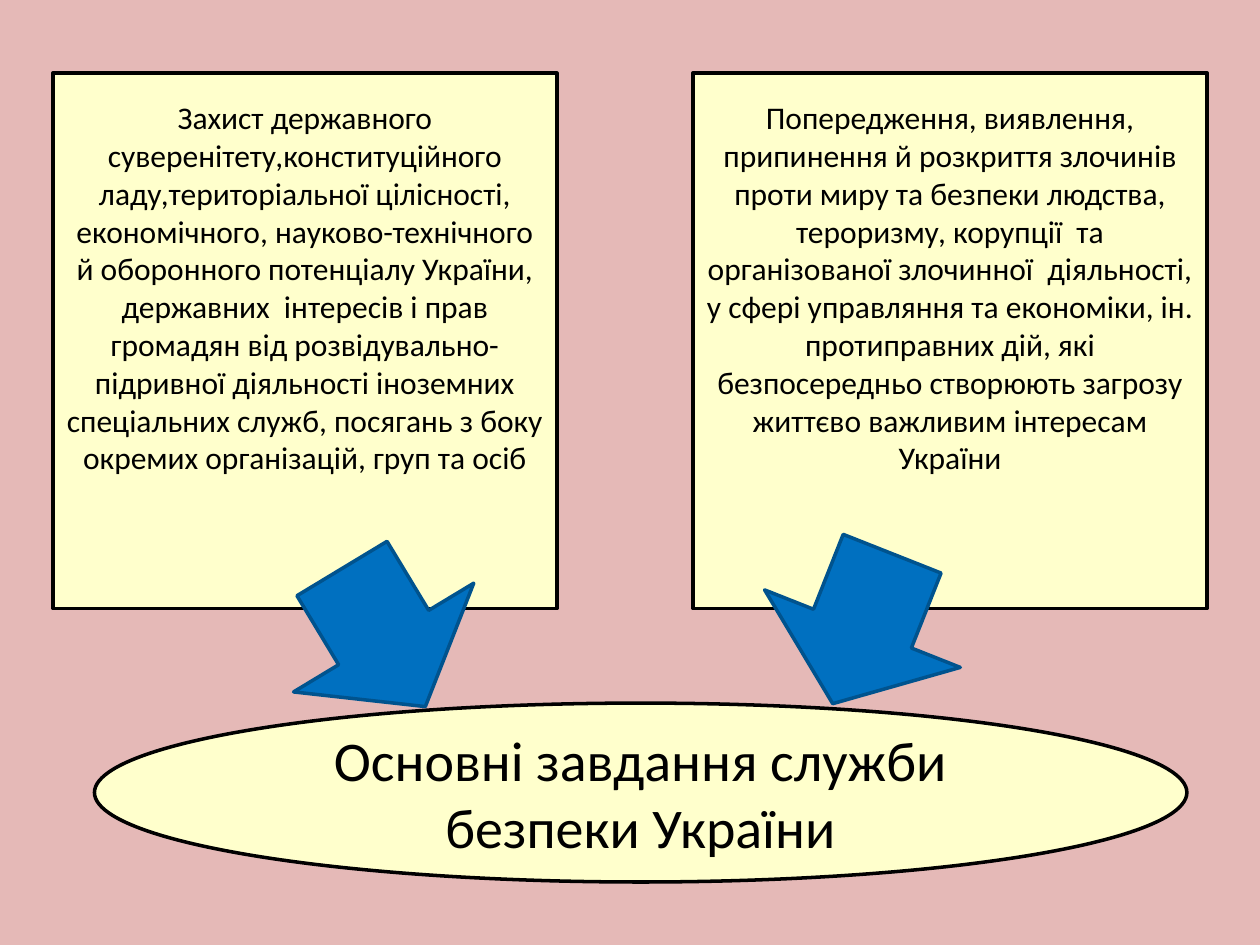
from pptx import Presentation
from pptx.dml.color import RGBColor
from pptx.enum.shapes import MSO_SHAPE as SHAPE
from pptx.enum.text import MSO_ANCHOR as ANCHOR, PP_ALIGN as ALIGN
from pptx.util import Inches, Pt

PINK = RGBColor(0xE5, 0xB9, 0xB7)
CREAM = RGBColor(0xFF, 0xFF, 0xCC)
BLACK = RGBColor(0x00, 0x00, 0x00)
BLUE = RGBColor(0x00, 0x70, 0xC0)
DARK_BLUE = RGBColor(0x00, 0x53, 0x8E)

SOVEREIGNTY = (
    "Захист державного суверенітету,конституційного ладу,територіальної "
    "цілісності, економічного, науково-технічного й оборонного потенціалу "
    "України, державних  інтересів і прав громадян від "
    "розвідувально-підривної діяльності іноземних спеціальних служб, "
    "посягань з боку окремих організацій, груп та осіб"
)
CRIME = (
    "Попередження, виявлення, припинення й розкриття злочинів проти миру та "
    "безпеки людства, тероризму, корупції  та організованої злочинної  "
    "діяльності, у сфері управляння та економіки, ін. протиправних дій, які "
    "безпосередньо створюють загрозу життєво важливим інтересам України"
)


def add_outlined(slide, kind, box, fill, line):
    s = slide.shapes.add_shape(kind, *(Inches(v) for v in box))
    s.shadow.inherit = False
    s.fill.solid()
    s.fill.fore_color.rgb = fill
    s.line.color.rgb = line
    s.line.width = Pt(2)
    return s


def write_text(s, text, size, anchor):
    tf = s.text_frame
    tf.word_wrap = True
    tf.vertical_anchor = anchor
    p = tf.paragraphs[0]
    p.alignment = ALIGN.CENTER
    r = p.add_run()
    r.text = text
    r.font.name = "Calibri"
    r.font.size = Pt(size)
    r.font.color.rgb = BLACK


def add_topic(slide, box, text):
    s = add_outlined(slide, SHAPE.OVAL, box, CREAM, BLACK)
    write_text(s, text, 32, ANCHOR.MIDDLE)


def add_task(slide, box, text):
    s = add_outlined(slide, SHAPE.RECTANGLE, box, CREAM, BLACK)
    s.text_frame.margin_top = s.text_frame.margin_bottom = Inches(0.2)
    write_text(s, text, 18, ANCHOR.TOP)


def add_arrow(slide, box, rotation):
    s = add_outlined(slide, SHAPE.DOWN_ARROW, box, BLUE, DARK_BLUE)
    s.rotation = rotation


def main():
    prs = Presentation()
    prs.slide_width, prs.slide_height = Inches(10), Inches(7.5)
    slide = prs.slides.add_slide(prs.slide_layouts[6])
    slide.background.fill.solid()
    slide.background.fill.fore_color.rgb = PINK

    # Topic that both tasks lead to
    add_topic(slide, (0.75, 5.58, 8.67, 1.42),
              "Основні завдання служби безпеки України")

    # Task boxes
    add_task(slide, (0.42, 0.58, 4, 4.25), SOVEREIGNTY)
    add_task(slide, (5.5, 0.58, 4.08, 4.25), CRIME)

    # Arrows from the tasks to the topic
    add_arrow(slide, (6.01, 4.35, 1.67, 1.28), 21.6)
    add_arrow(slide, (2.21, 4.42, 1.67, 1.28), 328.9)

    prs.save("out.pptx")


if __name__ == "__main__":
    main()
